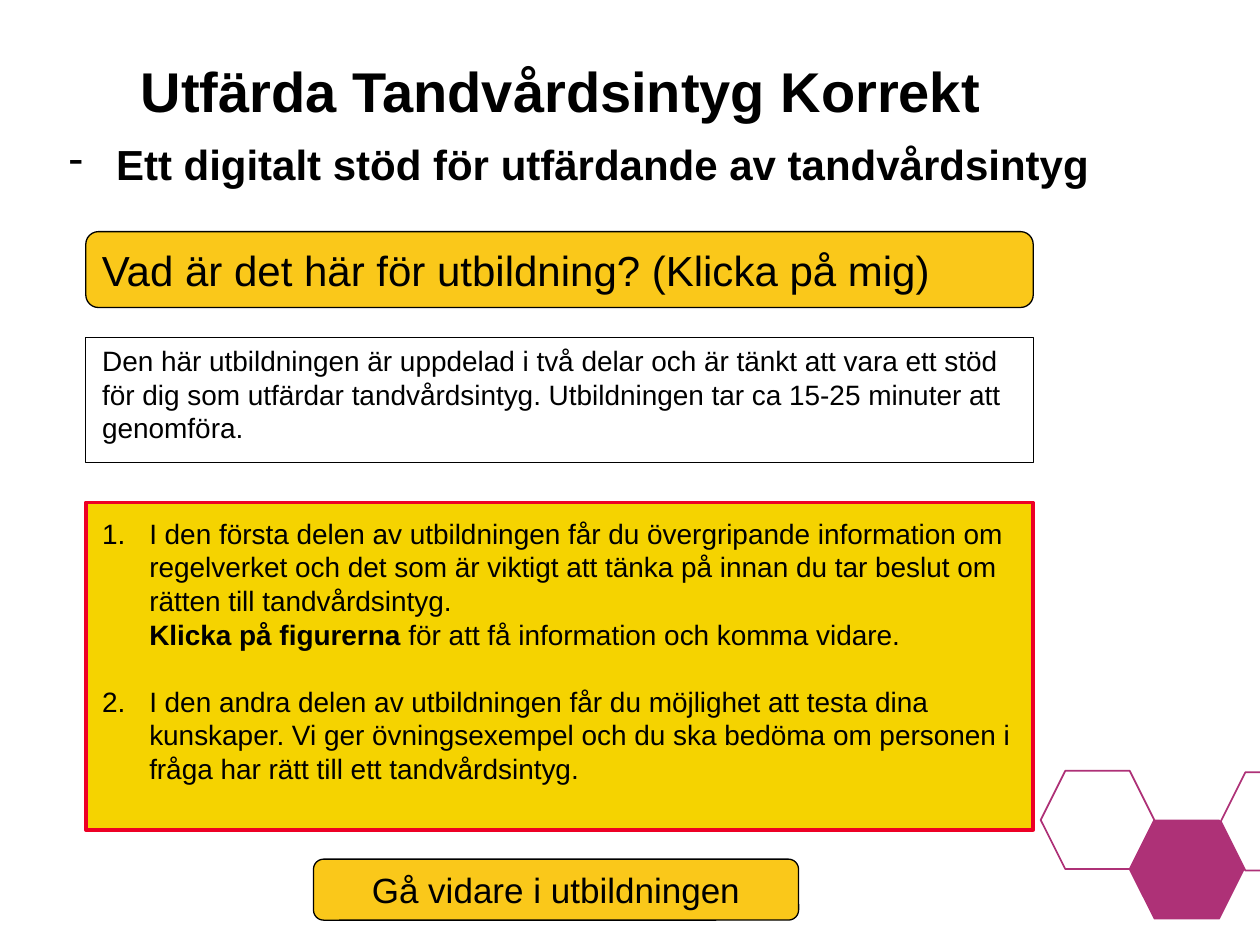
"""Builds the opening slide of a course on dental care certificates."""
import pptx
import pptx.dml.color
import pptx.enum.shapes
import pptx.enum.text
import pptx.oxml.ns
import pptx.util
from lxml import etree
from pptx.util import Cm, Pt

COLORS = {
    "black": "000000",
    "white": "FFFFFF",
    "plum": "AE3177",
    "amber": "FAC81A",
    "yellow": "F5D300",
    "red": "ED0025",
}
SHAPES = pptx.enum.shapes.MSO_SHAPE
ANCHOR = pptx.enum.text.MSO_ANCHOR
ALIGN = pptx.enum.text.PP_ALIGN
LINE_PITCH = Pt(19.2)

deck = pptx.Presentation()
deck.slide_width, deck.slide_height = Cm(25.4), Cm(19.05)
slide = deck.slides.add_slide(deck.slide_layouts[6])


def add_panel(kind, box, fill, line, width):
    panel = slide.shapes.add_shape(kind, *[Cm(length) for length in box])
    panel.shadow.inherit = False
    if fill:
        panel.fill.solid()
        panel.fill.fore_color.rgb = pptx.dml.color.RGBColor.from_string(COLORS[fill])
    else:
        panel.fill.background()
    panel.line.color.rgb = pptx.dml.color.RGBColor.from_string(COLORS[line])
    panel.line.width = Pt(width)
    panel.text_frame.word_wrap = True
    return panel


def style_text(paragraph, size, bold=None, align=ALIGN.LEFT, bullet=None):
    paragraph.alignment = align
    if bullet:
        tag, attributes = bullet
        properties = paragraph._p.get_or_add_pPr()
        properties.set("marL", str(Cm(0.95)))
        properties.set("indent", str(-Cm(0.95)))
        etree.SubElement(properties, pptx.oxml.ns.qn(tag), attributes)
    paragraph.font.name = "Arial"
    paragraph.font.size = Pt(size)
    paragraph.font.bold = bold
    paragraph.font.color.rgb = pptx.dml.color.RGBColor.from_string(COLORS["black"])


for left, top, fill in [(20.98, 15.54, "white"), (22.78, 16.54, "plum"), (24.61, 15.57, "white")]:
    add_panel(SHAPES.HEXAGON, (left, top, 2.29, 1.98), fill, "plum", 1)

headings = [
    ("Utfärda Tandvårdsintyg Korrekt", (2.59, 0.61, 22.86, 3.18), 0.53, 32, None),
    ("Ett digitalt stöd för utfärdande av tandvårdsintyg", (1.14, 2.59, 21.74, 1.47), 0.21, 24,
     ("a:buChar", {"char": "-"})),
]
for wording, box, inset, size, bullet in headings:
    heading = slide.shapes.add_textbox(*[Cm(length) for length in box]).text_frame
    heading.word_wrap = True
    heading.margin_top = Cm(inset)
    heading.text = wording
    style_text(heading.paragraphs[0], size, bold=True, bullet=bullet)

buttons = [
    ("Vad är det här för utbildning? (Klicka på mig)", (1.73, 4.67, 19.1, 1.53), 24, ALIGN.LEFT),
    ("Gå vidare i utbildningen", (6.32, 17.32, 9.78, 1.23), 20, ALIGN.CENTER),
]
for wording, box, size, align in buttons:
    button = add_panel(SHAPES.ROUNDED_RECTANGLE, box, "amber", "black", 0.75)
    button.text_frame.text = wording
    style_text(button.text_frame.paragraphs[0], size, align=align)

intro = add_panel(SHAPES.RECTANGLE, (1.73, 6.81, 19.1, 2.51), None, "black", 0.75).text_frame
parts = add_panel(SHAPES.RECTANGLE, (1.73, 10.13, 19.1, 6.6), "yellow", "red", 2).text_frame
for frame, inset in [(intro, 0.12), (parts, 0.28)]:
    frame.vertical_anchor = ANCHOR.TOP
    frame.margin_left = Cm(0.33)
    frame.margin_top = Cm(inset)

intro.text = (
    "Den här utbildningen är uppdelad i två delar och är tänkt att vara ett stöd för dig "
    "som utfärdar tandvårdsintyg. Utbildningen tar ca 15-25 minuter att genomföra."
)
style_text(intro.paragraphs[0], 16)
intro.paragraphs[0].line_spacing = LINE_PITCH

first_part = parts.paragraphs[0]
second_part = parts.add_paragraph()
for part in (first_part, second_part):
    style_text(part, 16, bullet=("a:buAutoNum", {"type": "arabicPeriod"}))
    part.line_spacing = LINE_PITCH
second_part.space_before = LINE_PITCH

first_part.add_run().text = (
    "I den första delen av utbildningen får du övergripande information om regelverket och "
    "det som är viktigt att tänka på innan du tar beslut om rätten till tandvårdsintyg."
)
first_part.add_line_break()
prompt = first_part.add_run()
prompt.text = "Klicka på figurerna"
prompt.font.bold = True
first_part.add_run().text = " för att få information och komma vidare."
second_part.add_run().text = (
    "I den andra delen av utbildningen får du möjlighet att testa dina kunskaper. Vi ger "
    "övningsexempel och du ska bedöma om personen i fråga har rätt till ett tandvårdsintyg."
)

deck.save("out.pptx")
